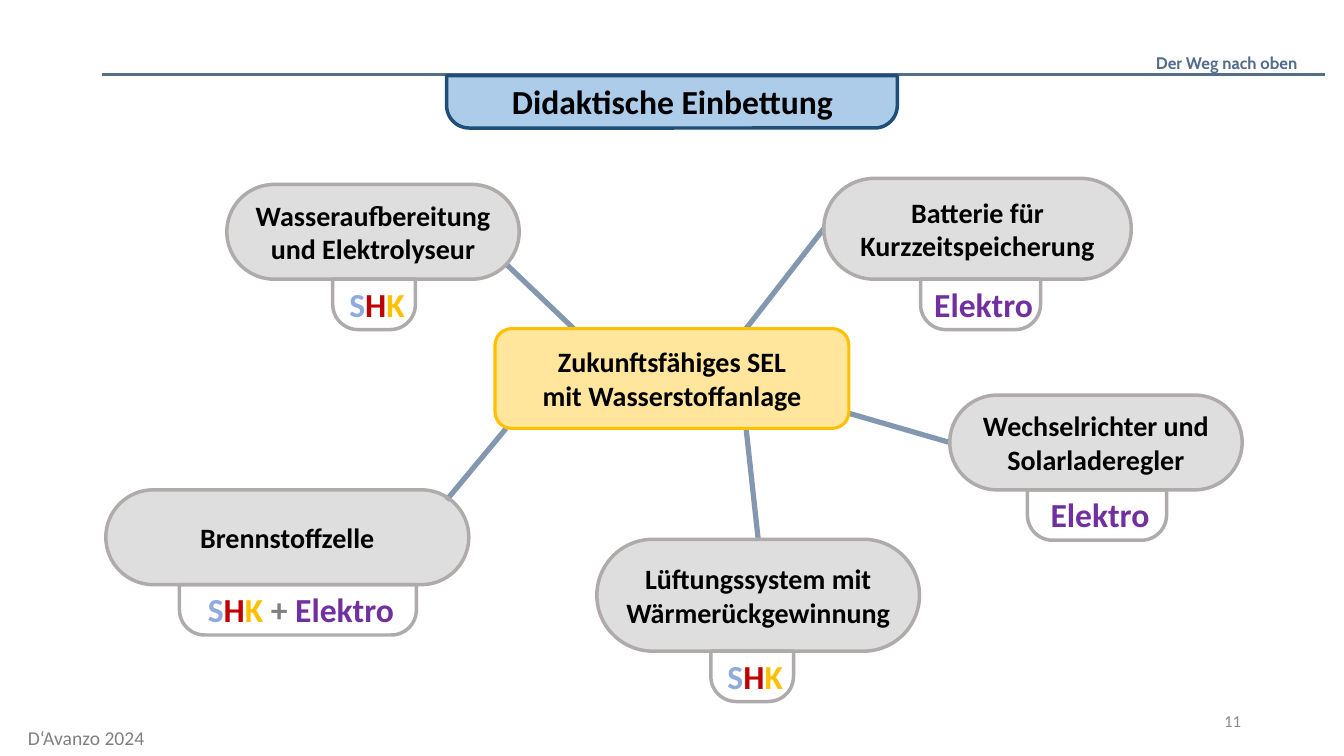
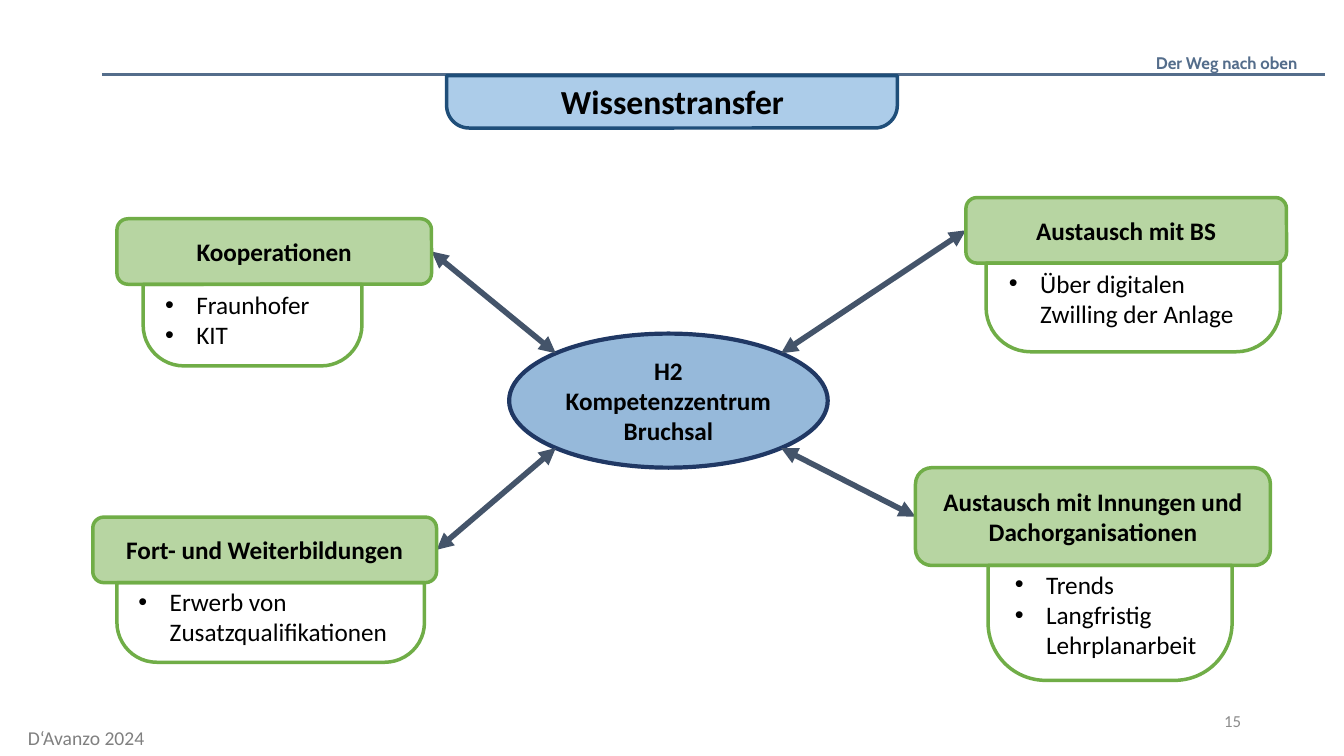
from lxml.etree import SubElement
from pptx import Presentation
from pptx.dml.color import RGBColor
from pptx.enum.shapes import MSO_CONNECTOR, MSO_SHAPE
from pptx.enum.text import MSO_ANCHOR, MSO_AUTO_SIZE, PP_ALIGN
from pptx.oxml.ns import qn
from pptx.util import Pt

PX = 9144
COLORS = {
    "black": "000000", "header": "546D8B", "footer": "808080", "page": "8C8C8C",
    "tab": "5B9BD5", "tab_line": "1F4E79", "node": "AFABAB", "spoke": "8497B0",
    "amber": "FFC000", "sky": "8FAADC", "red": "C00000", "violet": "7030A0",
    "center": "2E75B6", "center_line": "203864", "arrow": "44546A", "green": "70AD47",
}
SHK = [("S", "sky"), ("H", "red"), ("K", "amber")]
ELEKTRO = [("Elektro", "violet")]
BOTH = SHK + [(" + ", "footer")] + ELEKTRO
DIAGONAL = 0.5 ** 0.5


def emu(*lengths):
    return [round(n * PX) for n in lengths]


def rgb(name):
    return RGBColor.from_string(COLORS[name])


def write(sp, text, size=18, color="black", bold=False, font="Calibri",
          align=PP_ALIGN.CENTER, anchor=MSO_ANCHOR.MIDDLE,
          inset=(10, 5, 10, 5), wrap=True, bullet=False):
    tf = sp.text_frame
    tf.auto_size = MSO_AUTO_SIZE.NONE
    tf.word_wrap = wrap
    tf.vertical_anchor = anchor
    tf.margin_left, tf.margin_top, tf.margin_right, tf.margin_bottom = emu(*inset)
    paragraphs = text.split("\n") if isinstance(text, str) else [text]
    for i, content in enumerate(paragraphs):
        p = tf.add_paragraph() if i else tf.paragraphs[0]
        p.alignment = PP_ALIGN.LEFT if bullet else align
        if bullet:
            pPr = p._p.get_or_add_pPr()
            indent, = emu(31)
            pPr.set("marL", str(indent))
            pPr.set("indent", str(-indent))
            SubElement(pPr, qn("a:buFont")).set("typeface", "Arial")
            SubElement(pPr, qn("a:buChar")).set("char", "•")
        runs = [(content, color)] if isinstance(content, str) else content
        for words, shade in runs:
            for n, piece in enumerate(words.split("\v")):
                if n:
                    p.add_line_break()
                r = p.add_run()
                r.text = piece
                r.font.name = font
                r.font.size = Pt(size)
                r.font.bold = bold
                r.font.color.rgb = rgb(shade)
    return sp


def label(s, box, text, **style):
    return write(s.shapes.add_textbox(*emu(*box)), text, **style)


def shape(s, kind, box, line, width=2.5, fill=None, alpha=100, adjust=()):
    sp = s.shapes.add_shape(kind, *emu(*box))
    sp.shadow.inherit = False
    for i, value in enumerate(adjust):
        sp.adjustments[i] = value
    if fill:
        sp.fill.solid()
        sp.fill.fore_color.rgb = rgb(fill)
        color = sp.element.spPr.find(qn("a:solidFill"))[0]
        SubElement(color, qn("a:alpha")).set("val", str(alpha * 1000))
    else:
        sp.fill.background()
    sp.line.color.rgb = rgb(line)
    sp.line.width = Pt(width)
    return sp


def line(s, start, end, color, width, arrows=False):
    c = s.shapes.add_connector(MSO_CONNECTOR.STRAIGHT, *emu(*start, *end))
    c.line.color.rgb = rgb(color)
    c.line.width = Pt(width)
    if arrows:
        for tag in ("a:headEnd", "a:tailEnd"):
            SubElement(c.line._ln, qn(tag)).set("type", "triangle")
    SubElement(c.element.spPr, qn("a:effectLst"))


def build_layout(layout, s):
    for ph in list(layout.placeholders)[1:]:
        layout.shapes.element.remove(ph.element)
    label(s, (1146, 52, 141, 20), "Der Weg nach oben", size=12, color="header",
          bold=True, font="Cabin", align=PP_ALIGN.RIGHT, inset=(0, 0, 0, 0),
          wrap=False)
    line(s, (101, 74), (1314, 74), "header", 2.25)
    shape(s, MSO_SHAPE.ROUND_2_SAME_RECTANGLE, (443, 75, 447, 52), "tab_line",
          fill="tab", alpha=50, adjust=(0, 0.43))
    label(s, (8, 715, 155, 34), "D‘Avanzo 2024", size=14, color="footer")
    for sp in list(s.shapes):
        if not sp.is_placeholder:
            layout.shapes.element.append(sp.element)


def frame(s, title, page):
    sp = s.shapes.title
    sp.left, sp.top, sp.width, sp.height = emu(350, 75, 634, 50)
    write(sp, title, size=24, bold=True, anchor=MSO_ANCHOR.TOP)
    label(s, (941, 695, 300, 40), page, size=12, color="page", align=PP_ALIGN.RIGHT)


def node(s, box, text, tab, trades):
    x, y, w, h = box
    dx, tab_w = tab
    sp = shape(s, MSO_SHAPE.ROUNDED_RECTANGLE, box, "node", fill="node",
               alpha=39, adjust=(0.5,))
    write(sp, text, size=20, bold=True)
    sp = shape(s, MSO_SHAPE.ROUND_2_SAME_RECTANGLE, (x + dx, y + h, tab_w, 50),
               "node", adjust=(0, 0.5))
    write(sp, trades, size=24, bold=True, inset=(6, 6, 0, 0), wrap=False)


def embedding(s, hub):
    nodes = [
        ((225, 183, 290, 94), "Wasseraufbereitung und Elektrolyseur",
         (105, 82), SHK, (78, 0), (277, 79)),
        ((817, 177, 305, 100), "Batterie für Kurzzeitspeicherung",
         (96, 119), ELEKTRO, (249, 0), (0, 50)),
        ((942, 392, 290, 94), "Wechselrichter und Solarladeregler",
         (77, 138), ELEKTRO, (351, 84), (0, 47)),
        ((592, 535, 320, 111), "Lüftungssystem mit Wärmerückgewinnung",
         (113, 82), SHK, (249, 99), (160, 0)),
        ((105, 486, 360, 94), "Brennstoffzelle",
         (73, 235), BOTH, (11, 99), (338, 10)),
    ]
    for box, text, tab, trades, hub_end, node_end in nodes:
        line(s, (hub[0] + hub_end[0], hub[1] + hub_end[1]),
             (box[0] + node_end[0], box[1] + node_end[1]), "spoke", 3.75)
        node(s, box, text, tab, trades)
    sp = shape(s, MSO_SHAPE.ROUNDED_RECTANGLE, hub, "amber", 2.25, "amber", 39)
    write(sp, "Zukunftsfähiges SEL\vmit Wasserstoffanlage", size=20, bold=True)


def card(s, box, text, body, items, anchor):
    x, y, w, h = box
    dx, body_w, body_h = body
    sp = shape(s, MSO_SHAPE.ROUNDED_RECTANGLE, box, "green", fill="green", alpha=50)
    write(sp, text, bold=True)
    sp = shape(s, MSO_SHAPE.ROUND_2_SAME_RECTANGLE, (x + dx, y + h, body_w, body_h),
               "green", adjust=(0, 0.5))
    write(sp, items, bullet=True, anchor=anchor)


def transfer(s, center):
    x, y, w, h = center
    cx, cy = x + w / 2, y + h / 2
    sp = shape(s, MSO_SHAPE.OVAL, center, "center_line", 3, "center", 50)
    write(sp, "H2 Kompetenzzentrum Bruchsal", bold=True)
    cards = [
        ((116, 217, 312, 65), "Kooperationen", (26, 217, 81),
         "Fraunhofer\nKIT", MSO_ANCHOR.TOP),
        ((92, 513, 341, 65), "Fort- und Weiterbildungen", (24, 305, 79),
         "Erwerb von Zusatzqualifikationen", MSO_ANCHOR.MIDDLE),
        ((958, 196, 318, 65), "Austausch mit BS", (20, 292, 88),
         "Über digitalen Zwilling der Anlage", MSO_ANCHOR.TOP),
        ((908, 464, 352, 97), "Austausch mit Innungen und Dachorganisationen",
         (72, 242, 114), "Trends\nLangfristig Lehrplanarbeit", MSO_ANCHOR.MIDDLE),
    ]
    for box, text, body, items, anchor in cards:
        left, top, width, height = box
        side = -1 if left < cx else 1
        level = -1 if top < cy else 1
        inner = left + width if side < 0 else left
        line(s, (cx + side * w / 2 * DIAGONAL, cy + level * h / 2 * DIAGONAL),
             (inner, top + height / 2), "arrow", 4, arrows=True)
        card(s, box, text, body, items, anchor)


def main():
    prs = Presentation()
    prs.slide_width, prs.slide_height = emu(1333, 750)
    layout = prs.slide_layouts[5]
    first, second = [prs.slides.add_slide(layout) for _ in range(2)]
    build_layout(layout, first)
    frame(first, "Didaktische Einbettung", "11")
    embedding(first, (491, 326, 351, 99))
    frame(second, "Wissenstransfer", "15")
    transfer(second, (505, 331, 316, 133))
    prs.save("out.pptx")


if __name__ == "__main__":
    main()
